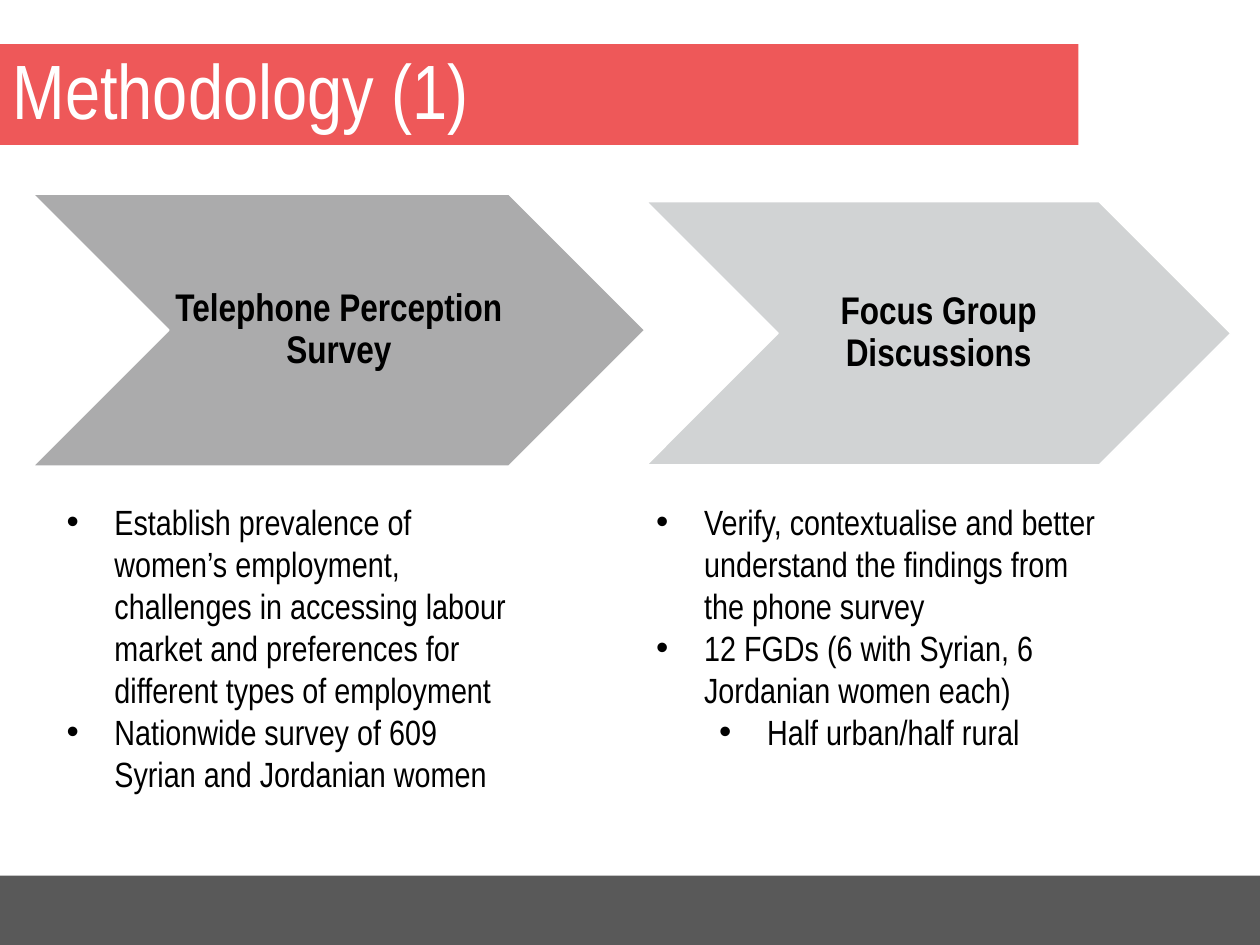
from lxml import etree
from pptx import Presentation
from pptx import util as u
from pptx.dml.color import RGBColor
from pptx.enum import shapes, text
from pptx.oxml.ns import qn

CORAL = RGBColor(0xEE, 0x58, 0x59)
DARK_GREY = RGBColor(0x59, 0x59, 0x59)
MID_GREY = RGBColor(0xAB, 0xAB, 0xAC)
LIGHT_GREY = RGBColor(0xD1, 0xD3, 0xD4)
WHITE = RGBColor(0xFF, 0xFF, 0xFF)
BLACK = RGBColor(0x00, 0x00, 0x00)

SURVEY_POINTS = [
    (0, "Establish prevalence of women’s employment, challenges in accessing "
        "labour market and preferences for different types of employment"),
    (0, "Nationwide survey of 609 Syrian and Jordanian women"),
]
GROUP_POINTS = [
    (0, "Verify, contextualise and better understand the findings from "
        "the phone survey"),
    (0, "12 FGDs (6 with Syrian, 6 Jordanian women each)"),
    (1, "Half urban/half rural"),
]


class SlideBuilder:
    font_name = "Arial Narrow"

    def __init__(self, page):
        self.page = page

    def style(self, para, size, color, bold=False):
        para.font.name = self.font_name
        para.font.size = u.Pt(size)
        para.font.color.rgb = color
        para.font.bold = bold

    def fill(self, shape, color):
        shape.fill.solid()
        shape.fill.fore_color.rgb = color

    def title(self, wording, left, top, width, height):
        box = self.page.shapes.title
        box.left, box.top = u.Inches(left), u.Inches(top)
        box.width, box.height = u.Inches(width), u.Inches(height)
        self.fill(box, CORAL)
        frame = box.text_frame
        frame.text = wording
        frame.auto_size = text.MSO_AUTO_SIZE.NONE
        frame.vertical_anchor = text.MSO_ANCHOR.MIDDLE
        para = frame.paragraphs[0]
        para.alignment = text.PP_ALIGN.LEFT
        para.line_spacing = 0.9
        self.style(para, 44, WHITE)

    def shape(self, kind, color, left, top, width, height):
        box = self.page.shapes.add_shape(
            kind, u.Inches(left), u.Inches(top), u.Inches(width), u.Inches(height))
        box.shadow.inherit = False
        self.fill(box, color)
        box.line.fill.background()
        return box

    def chevron(self, wording, color, left, top, width, height):
        box = self.shape(shapes.MSO_SHAPE.CHEVRON, color, left, top, width, height)
        box.line.color.rgb = WHITE
        box.line.width = u.Pt(1)
        frame = box.text_frame
        frame.word_wrap = True
        frame.vertical_anchor = text.MSO_ANCHOR.MIDDLE
        frame.margin_left = frame.margin_right = u.Inches(0.02)
        frame.margin_top = frame.margin_bottom = u.Inches(0.02)
        para = frame.paragraphs[0]
        para.text = wording
        para.alignment = text.PP_ALIGN.CENTER
        para.line_spacing = 0.9
        self.style(para, 22, BLACK, bold=True)

    def bullets(self, points, left, top, width, height):
        box = self.page.shapes.add_textbox(
            u.Inches(left), u.Inches(top), u.Inches(width), u.Inches(height))
        frame = box.text_frame
        frame.word_wrap = True
        for number, (level, wording) in enumerate(points):
            para = frame.add_paragraph() if number else frame.paragraphs[0]
            para.text = wording
            para.level = level
            props = para._p.get_or_add_pPr()
            props.set("marL", str(u.Inches(0.38 + 0.5 * level)))
            props.set("indent", str(-u.Inches(0.38)))
            etree.SubElement(props, qn("a:buFont"), typeface="Arial")
            etree.SubElement(props, qn("a:buChar"), char="•")
            self.style(para, 20, BLACK)


def main():
    deck = Presentation()
    deck.slide_width, deck.slide_height = u.Inches(10), u.Inches(7.5)
    builder = SlideBuilder(deck.slides.add_slide(deck.slide_layouts[5]))
    builder.shape(shapes.MSO_SHAPE.RECTANGLE, DARK_GREY, 0, 6.95, 10, 0.55)
    builder.title("Methodology (1)", 0, 0.35, 8.56, 0.8)
    builder.chevron("Telephone Perception Survey", MID_GREY, 0.26, 1.54, 4.86, 2.16)
    builder.chevron("Focus Group Discussions", LIGHT_GREY, 5.13, 1.6, 4.64, 2.09)
    builder.bullets(SURVEY_POINTS, 0.43, 3.92, 3.82, 3.2)
    builder.bullets(GROUP_POINTS, 5.11, 3.92, 3.71, 2.42)
    deck.save("out.pptx")


if __name__ == "__main__":
    main()
